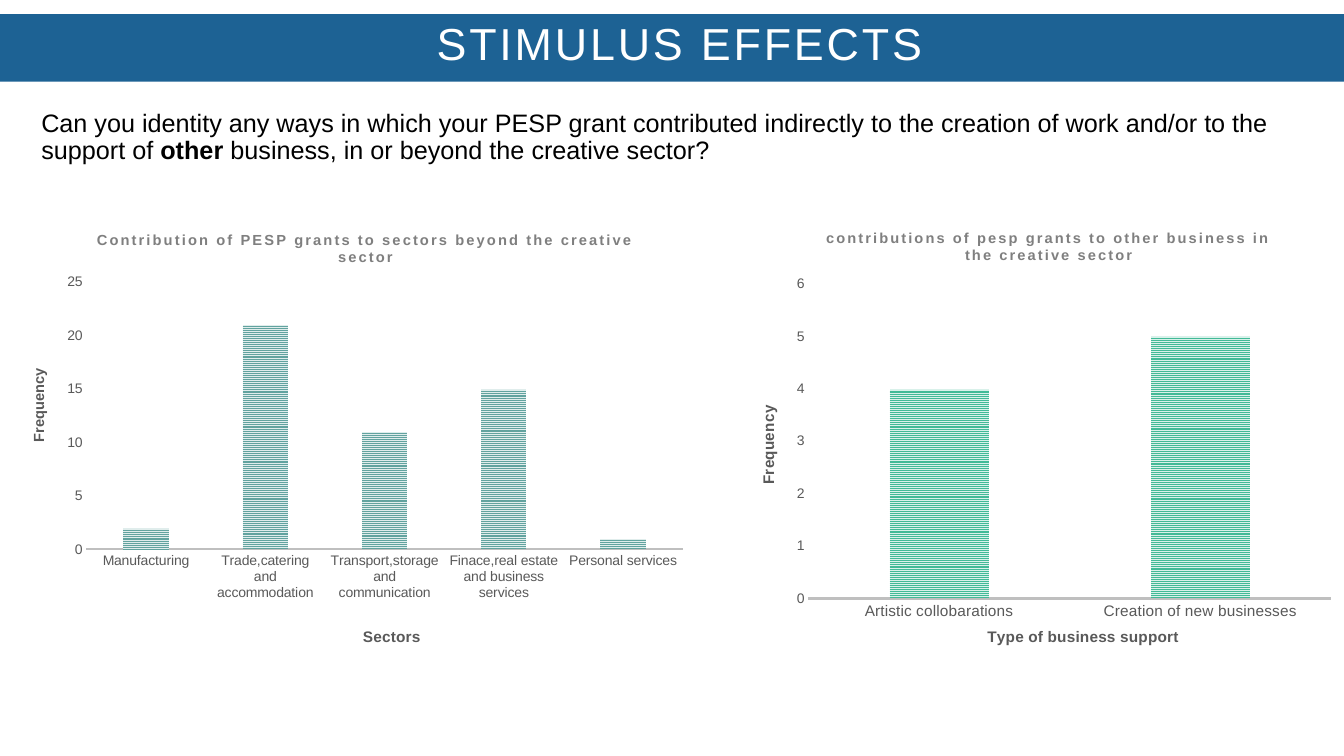
from dataclasses import dataclass

from lxml import etree
from pptx import Presentation, util as u
from pptx.chart.data import CategoryChartData
from pptx.dml.color import RGBColor
from pptx.enum import chart as ch, dml, shapes, text
from pptx.oxml import parse_xml
from pptx.oxml.ns import nsdecls

FONT = "Arial"
GRAY = "595959"


@dataclass(frozen=True)
class Box:
    """Place and size in percent of the slide."""
    left: float
    top: float
    width: float
    height: float


@dataclass(frozen=True)
class Label:
    """Chart text with its place in percent of the chart."""
    text: str
    x: float
    y: float
    size: float = 11


@dataclass(frozen=True)
class BarChart:
    box: Box
    plot: Box  # percent of the chart
    title: Label
    cat_title: Label
    val_title: Label
    cat_size: float
    top_value: int
    step: int
    fore: str
    back: str
    values: dict[str, int]


CHARTS = [
    BarChart(
        Box(0.9, 27.6, 52.2, 58.4), Box(10.6, 16.7, 85, 61),
        Label("Contribution of PESP grants to sectors beyond the creative sector", 11.7, 4.4, 10.5),
        Label("Sectors", 49.6, 94.5), Label("Frequency", 2, 35.9, 10.5),
        10, 25, 5, "62A39F", "E0EDEC",
        {"Manufacturing": 2, "Trade,catering and accommodation": 21,
         "Transport,storage and communication": 11,
         "Finace,real estate and business services": 15, "Personal services": 1}),
    BarChart(
        Box(54.6, 27.6, 44.5, 58.4), Box(12.5, 17.3, 87.5, 72.2),
        Label("contributions of pesp grants to other business in the creative sector", 15, 3.9, 10.5),
        Label("Type of business support", 42, 95.2), Label("Frequency", 3.5, 44.7),
        11, 6, 1, "42BA97", "D9F1EA",
        {"Artistic collobarations": 4, "Creation of new businesses": 5}),
]

prs = Presentation()
prs.slide_width, prs.slide_height = u.Inches(13.33), u.Inches(7.5)
s = prs.slides.add_slide(prs.slide_layouts[6])


def rgb(value: str) -> RGBColor:
    return RGBColor.from_string(value)


def place(box: Box) -> list[int]:
    w, h = prs.slide_width, prs.slide_height
    return [round(share * side / 100) for share, side in
            ((box.left, w), (box.top, h), (box.width, w), (box.height, h))]


def add_run(p, content: str, *, size: float, color: str, bold: bool = False,
            spacing: float = 0) -> None:
    r = p.add_run()
    r.text = content
    r.font.name, r.font.size, r.font.bold = FONT, u.Pt(size), bold
    r.font.color.rgb = rgb(color)
    if spacing:
        r._r.get_or_add_rPr().set("spc", str(round(spacing * 100)))


def set_layout(parent, index: int, **shares: float) -> None:
    """Fix a chart part's place; shares are percent of the chart."""
    for old in parent.findall("{*}layout"):
        parent.remove(old)
    layout = parse_xml(f"<c:layout {nsdecls('c')}><c:manualLayout/></c:layout>")
    tag = "{" + layout.nsmap["c"] + "}"
    modes = {"xMode": "edge", "yMode": "edge"}
    if "w" in shares:
        modes = {"layoutTarget": "inner", **modes}
    for name, value in {**modes, **{k: v / 100 for k, v in shares.items()}}.items():
        etree.SubElement(layout[0], tag + name).set("val", str(value))
    parent.insert(index, layout)


def set_title(title, label: Label, *, color: str = GRAY, spacing: float = 0,
              upright: bool = False) -> None:
    tf = title.text_frame
    add_run(tf.paragraphs[0], label.text, size=label.size, color=color, bold=True,
            spacing=spacing)
    if upright:
        tf._txBody.bodyPr.set("rot", "-5400000")
    set_layout(title._element, 1, x=label.x, y=label.y)


def add_bar_chart(spec_: BarChart) -> None:
    data = CategoryChartData()
    data.categories = list(spec_.values)
    data.add_series("Series 1", list(spec_.values.values()))
    chart = s.shapes.add_chart(ch.XL_CHART_TYPE.COLUMN_CLUSTERED,
                               *place(spec_.box), data).chart
    chart.has_legend = False
    chart.font.name, chart.font.size = FONT, u.Pt(10)
    chart.has_title = True
    set_title(chart.chart_title, spec_.title, color="7F7F7F", spacing=1.5)

    # Axes
    cat, val = chart.category_axis, chart.value_axis
    for axis, size in ((cat, spec_.cat_size), (val, 10)):
        axis.has_major_gridlines = False
        axis.major_tick_mark = axis.minor_tick_mark = ch.XL_TICK_MARK.NONE
        font = axis.tick_labels.font
        font.name, font.size = FONT, u.Pt(size)
        font.color.rgb = rgb(GRAY)
    cat.format.line.color.rgb = rgb("BFBFBF")
    cat.format.line.width = u.Pt(1.5)
    val.format.line.fill.background()
    val.minimum_scale, val.maximum_scale, val.major_unit = 0, spec_.top_value, spec_.step
    set_title(cat.axis_title, spec_.cat_title)
    set_title(val.axis_title, spec_.val_title, upright=True)

    # Bars
    plot = chart.plots[0]
    plot.gap_width, plot.overlap, plot.vary_by_categories = 164, -22, False
    fill = plot.series[0].format.fill
    fill.patterned()
    fill.pattern = dml.MSO_PATTERN.NARROW_HORIZONTAL
    fill.fore_color.rgb, fill.back_color.rgb = rgb(spec_.fore), rgb(spec_.back)
    area = spec_.plot
    set_layout(chart._chartSpace.chart.plotArea, 0,
               x=area.left, y=area.top, w=area.width, h=area.height)


# Question
tf = s.shapes.add_textbox(*place(Box(2.7, 14, 94.6, 10.27))).text_frame
tf.word_wrap = True
tf.margin_left = tf.margin_right = tf.margin_top = tf.margin_bottom = u.Inches(0.05)
p = tf.paragraphs[0]
p.line_spacing, p.space_before, p.space_after = 0.9, u.Pt(12), u.Pt(2)
for words, bold in (
        ("Can you identity any ways in which your PESP grant contributed indirectly "
         "to the creation of work and/or to the support of ", False),
        ("other", True),
        (" business, in or beyond the creative sector?", False)):
    add_run(p, words, size=18, color="000000", bold=bold)

# Charts
for bar_chart in CHARTS:
    add_bar_chart(bar_chart)

# Banner
sp = s.shapes.add_shape(shapes.MSO_SHAPE.RECTANGLE, *place(Box(0, 1.87, 100, 8.93)))
sp.shadow.inherit = False
sp.fill.solid()
sp.fill.fore_color.rgb = rgb("1D6294")
sp.line.fill.background()
tf = sp.text_frame
tf.margin_left = u.Inches(0.25)
tf.vertical_anchor = text.MSO_ANCHOR.MIDDLE
p = tf.paragraphs[0]
p.alignment, p.line_spacing = text.PP_ALIGN.CENTER, 0.8
add_run(p, "STIMULUS EFFECTS", size=32, color="FFFFFF", spacing=2)

prs.save("out.pptx")
